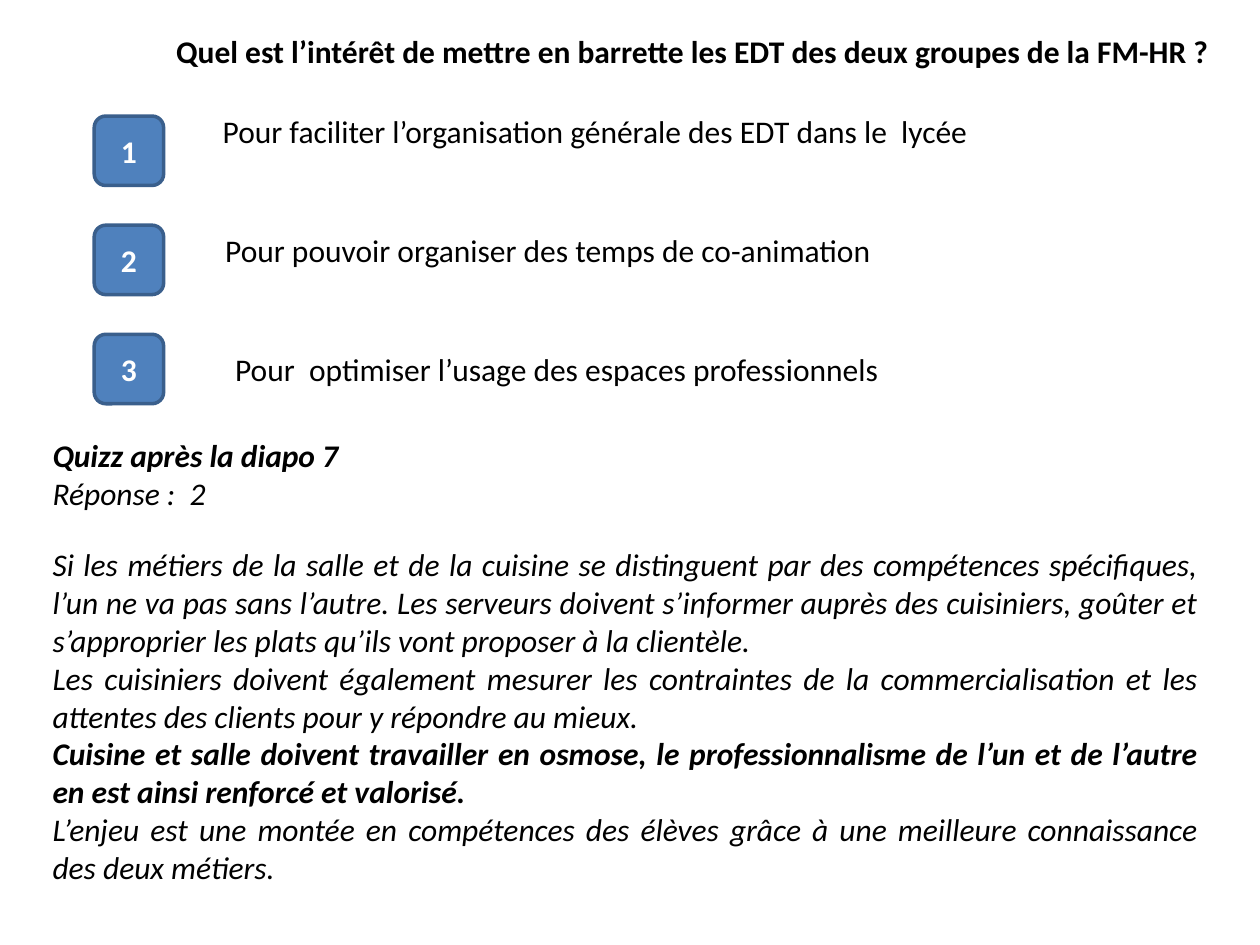
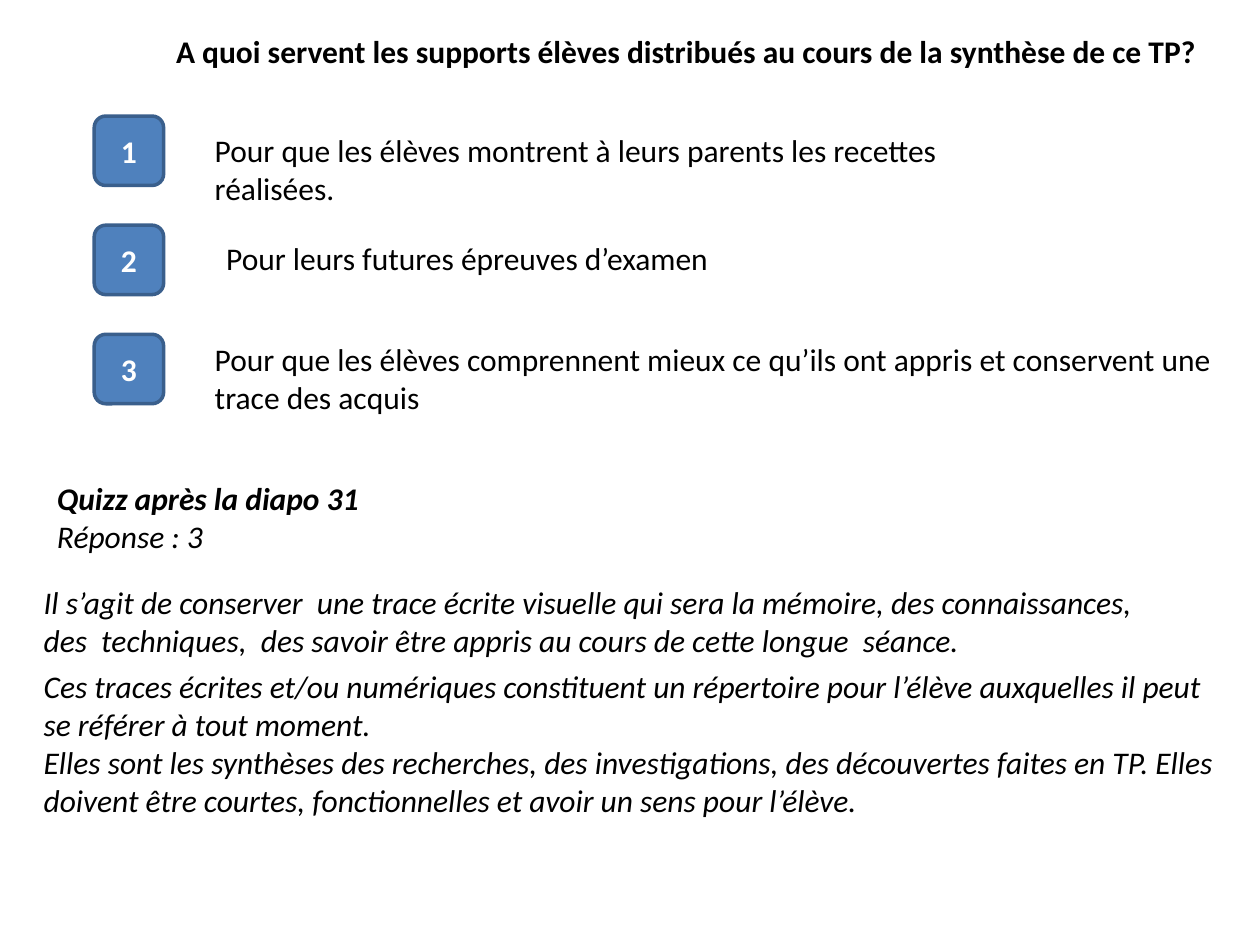
from dataclasses import dataclass

from pptx import Presentation
from pptx.dml.color import RGBColor as RGB
from pptx.enum.shapes import MSO_SHAPE as SHAPE
from pptx.enum.text import MSO_ANCHOR as ANCHOR, PP_ALIGN as ALIGN
from pptx.util import Cm, Pt


@dataclass(frozen=True)
class Theme:
    font: str = "Calibri"
    size: int = 18
    text: RGB = RGB(0, 0, 0)
    button: RGB = RGB(0x4F, 0x81, 0xBD)
    border: RGB = RGB(0x3A, 0x5F, 0x8C)
    button_text: RGB = RGB(255, 255, 255)
    border_width: int = 2


@dataclass(frozen=True)
class Box:
    x: float
    y: float
    w: float
    h: float

    def inside(self, dx, dy, w, h):
        return Box(self.x + dx, self.y + dy, w, h)

    def lengths(self):
        return Cm(self.x), Cm(self.y), Cm(self.w), Cm(self.h)


THEME = Theme()
TITLE = Box(3.3, 0.53, 21.56, 1.0)
CHOICES = Box(1.9, 2.34, 22.9, 5.8)
BUTTON = 1.4
PITCH = 2.2
LINE_H = 1.02


def add_run(p, text, bold=False, italic=False, color=THEME.text):
    r = p.add_run()
    r.text = text
    r.font.name = THEME.font
    r.font.size = Pt(THEME.size)
    r.font.bold = bold
    r.font.italic = italic
    r.font.color.rgb = color


def add_text(s, box, paragraphs, italic=False, align=ALIGN.LEFT):
    tf = s.shapes.add_textbox(*box.lengths()).text_frame
    tf.word_wrap = True
    for i, (text, bold) in enumerate(paragraphs):
        p = tf.paragraphs[0] if i == 0 else tf.add_paragraph()
        p.alignment = align
        add_run(p, text, bold, italic)


def add_button(s, box, number):
    sp = s.shapes.add_shape(SHAPE.ROUNDED_RECTANGLE, *box.lengths())
    sp.shadow.inherit = False
    sp.fill.solid()
    sp.fill.fore_color.rgb = THEME.button
    sp.line.color.rgb = THEME.border
    sp.line.width = Pt(THEME.border_width)
    sp.text_frame.vertical_anchor = ANCHOR.MIDDLE
    p = sp.text_frame.paragraphs[0]
    p.alignment = ALIGN.CENTER
    add_run(p, str(number), bold=True, color=THEME.button_text)


def add_choices(s, box, choices):
    for i, (dx, dy, width, lines, text) in enumerate(choices):
        top = i * PITCH
        add_button(s, box.inside(0, top, BUTTON, BUTTON), i + 1)
        add_text(s, box.inside(dx, top + dy, width, lines * LINE_H), [(text, False)])


def add_answer(s, box, after, answer):
    add_text(s, box, [(after, True), (answer, False)], italic=True)


def add_question(prs, question, choices):
    s = prs.slides.add_slide(prs.slide_layouts[6])
    add_text(s, TITLE, [(question, True)])
    add_choices(s, CHOICES, choices)
    return s


def add_timetable_quiz(prs):
    s = add_question(
        prs,
        "Quel est l’intérêt de mettre en barrette les EDT des deux groupes de la FM-HR ?",
        [
            (2.34, -0.2, 16.2, 1, "Pour faciliter l’organisation générale des EDT dans le  lycée"),
            (2.39, 0, 15.2, 1, "Pour pouvoir organiser des temps de co-animation"),
            (2.59, 0.2, 13.8, 1, "Pour  optimiser l’usage des espaces professionnels"),
        ],
    )
    add_answer(s, Box(0.81, 8.66, 22.1, 1.8), "Quizz après la diapo 7", "Réponse :  2")
    add_text(
        s,
        Box(0.81, 10.87, 23.6, 7.24),
        [
            ("Si les métiers de la salle et de la cuisine se distinguent par des compétences "
             "spécifiques, l’un ne va pas sans l’autre. Les serveurs doivent s’informer auprès des "
             "cuisiniers, goûter et s’approprier les plats qu’ils vont proposer à la clientèle.", False),
            ("Les cuisiniers doivent également mesurer les contraintes de la commercialisation "
             "et les attentes des clients pour y répondre au mieux.", False),
            ("Cuisine et salle doivent travailler en osmose, le professionnalisme de l’un et de "
             "l’autre en est ainsi renforcé et valorisé.", True),
            ("L’enjeu est une montée en compétences des élèves grâce à une meilleure connaissance "
             "des deux métiers.", False),
        ],
        italic=True,
        align=ALIGN.JUSTIFY,
    )


def add_handout_quiz(prs):
    s = add_question(
        prs,
        "A quoi servent les supports élèves distribués au cours de la synthèse de ce TP?",
        [
            (2.18, 0.18, 16.2, 2, "Pour que les élèves montrent à leurs parents les recettes réalisées."),
            (2.41, 0.15, 18.6, 1, "Pour leurs futures épreuves d’examen"),
            (2.18, 0, 20.73, 2, "Pour que les élèves comprennent mieux ce qu’ils ont appris "
                                "et conservent une trace des acquis"),
        ],
    )
    add_answer(s, Box(0.9, 9.53, 22.1, 1.8), "Quizz après la diapo 31", "Réponse : 3")
    add_text(
        s,
        Box(0.63, 11.63, 23.01, 1.8),
        [("Il s’agit de conserver  une trace écrite visuelle qui sera la mémoire, des connaissances, "
          "des  techniques,  des savoir être appris au cours de cette longue  séance.", False)],
        italic=True,
    )
    add_text(
        s,
        Box(0.63, 13.33, 24.2, 3.33),
        [
            ("Ces traces écrites et/ou numériques constituent un répertoire pour l’élève "
             "auxquelles il peut se référer à tout moment.", False),
            ("Elles sont les synthèses des recherches, des investigations, des découvertes faites "
             "en TP. Elles doivent être courtes, fonctionnelles et avoir un sens pour l’élève.", False),
        ],
        italic=True,
    )


def main():
    prs = Presentation()
    prs.slide_width, prs.slide_height = Cm(25.4), Cm(19.05)
    add_timetable_quiz(prs)
    add_handout_quiz(prs)
    prs.save("out.pptx")


if __name__ == "__main__":
    main()
